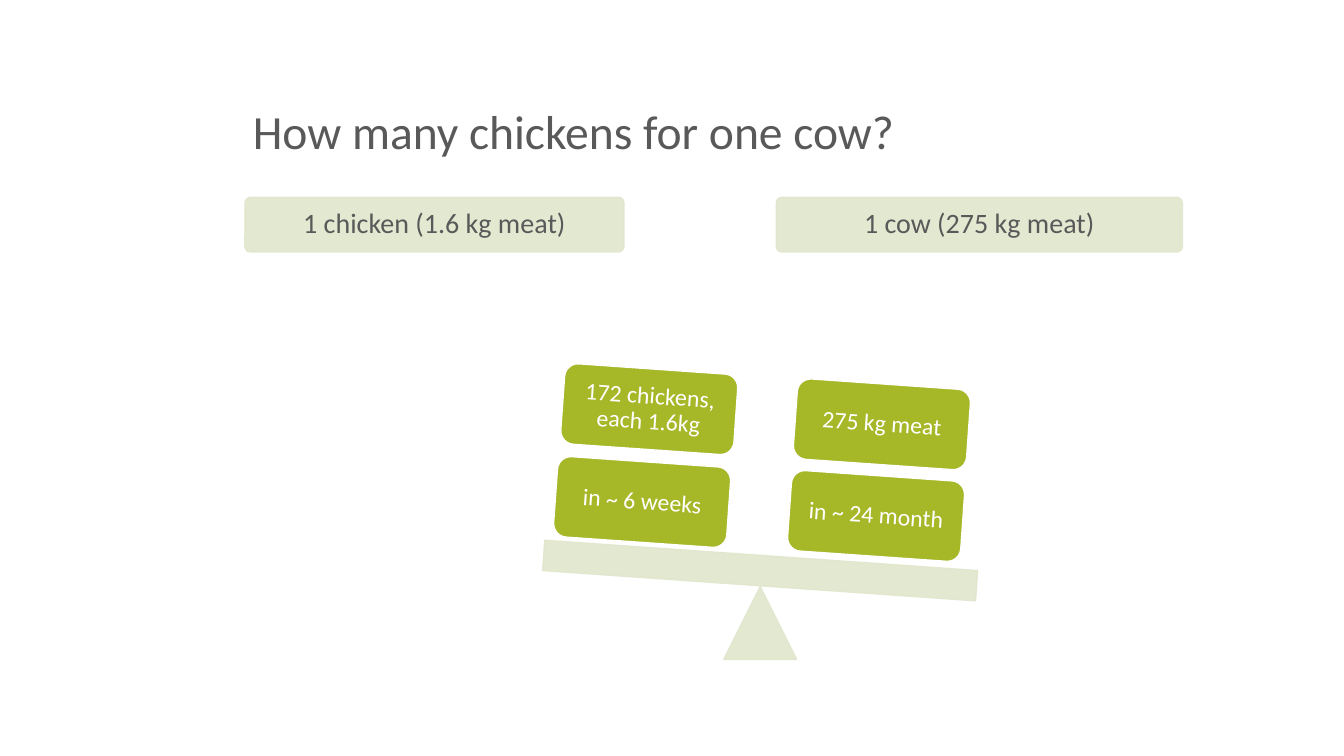
from lxml import etree
from pptx import Presentation
from pptx.dml.color import RGBColor
from pptx.enum.shapes import MSO_SHAPE as SHAPE
from pptx.enum.text import MSO_ANCHOR as ANCHOR, PP_ALIGN as ALIGN
from pptx.oxml.ns import qn
from pptx.util import Pt

GREY = RGBColor(0x59, 0x59, 0x59)
PALE = RGBColor(0xE1, 0xE6, 0xCD)
GREEN = RGBColor(0xA6, 0xB7, 0x27)
WHITE = RGBColor(0xFF, 0xFF, 0xFF)
TILT = 4


def write(sp, text, size, color, align, anchor, inset=None):
    tf = sp.text_frame
    tf.word_wrap = True
    tf.vertical_anchor = anchor
    if inset is not None:
        for side in ("left", "top", "right", "bottom"):
            setattr(tf, f"margin_{side}", Pt(inset))
    p = tf.paragraphs[0]
    p.alignment = align
    p.line_spacing = 0.9
    r = p.add_run()
    r.text = text
    for name, value in {"name": "Calibri", "size": Pt(size)}.items():
        setattr(r.font, name, value)
    r.font.color.rgb = color


def add_shape(s, kind, box, fill, line, alpha=None, rotation=0):
    sp = s.shapes.add_shape(kind, *map(Pt, box))
    sp.shadow.inherit = False
    sp.rotation = rotation
    sp.fill.solid()
    sp.fill.fore_color.rgb = fill
    sp.line.color.rgb = line
    sp.line.width = Pt(1)
    if alpha:
        for clr in sp._element.spPr.iter(qn("a:srgbClr")):
            etree.SubElement(clr, qn("a:alpha")).set("val", str(alpha * 1000))
    return sp


def add_title(s, box, text):
    sp = s.shapes.add_textbox(*map(Pt, box))
    write(sp, text, 34, GREY, ALIGN.LEFT, ANCHOR.BOTTOM)


def add_header(s, box, text):
    sp = add_shape(s, SHAPE.ROUNDED_RECTANGLE, box, PALE, PALE, 90)
    sp.adjustments[0] = 0.1
    write(sp, text, 20, GREY, ALIGN.CENTER, ANCHOR.MIDDLE, 5.5)


def add_balance(s, box, weights):
    x, y, w, h = box
    pivot, plank_h = 52, 21.7
    add_shape(s, SHAPE.ISOSCELES_TRIANGLE,
              (x + (w - pivot) / 2, y + h - pivot, pivot, pivot),
              PALE, PALE, 90)
    add_shape(s, SHAPE.RECTANGLE,
              (x, y + h - pivot - plank_h - 0.6, w, plank_h),
              PALE, PALE, 90, TILT)
    for dx, dy, text in weights:
        sp = add_shape(s, SHAPE.ROUNDED_RECTANGLE,
                       (x + dx, y + dy, 124, 57.6), GREEN, WHITE,
                       rotation=TILT)
        write(sp, text, 17, WHITE, ALIGN.CENTER, ANCHOR.MIDDLE, 5)


def main():
    prs = Presentation()
    prs.slide_width, prs.slide_height = Pt(960), Pt(540)
    s = prs.slides.add_slide(prs.slide_layouts[6])
    add_title(s, (173.5, 24, 738, 94), "How many chickens for one cow?")
    add_header(s, (175, 141, 270.7, 39), "1 chicken (1.6 kg meat)")
    add_header(s, (554.5, 141, 290, 39), "1 cow (275 kg meat)")
    add_balance(s, (388, 263.5, 310, 207.5), [
        (180, 10.8, "275 kg meat"),
        (13.8, 0, "172 chickens, each 1.6kg"),
        (175.8, 76.3, "in ~ 24 month"),
        (8.7, 66.3, "in ~ 6 weeks"),
    ])
    prs.save("out.pptx")


if __name__ == "__main__":
    main()
